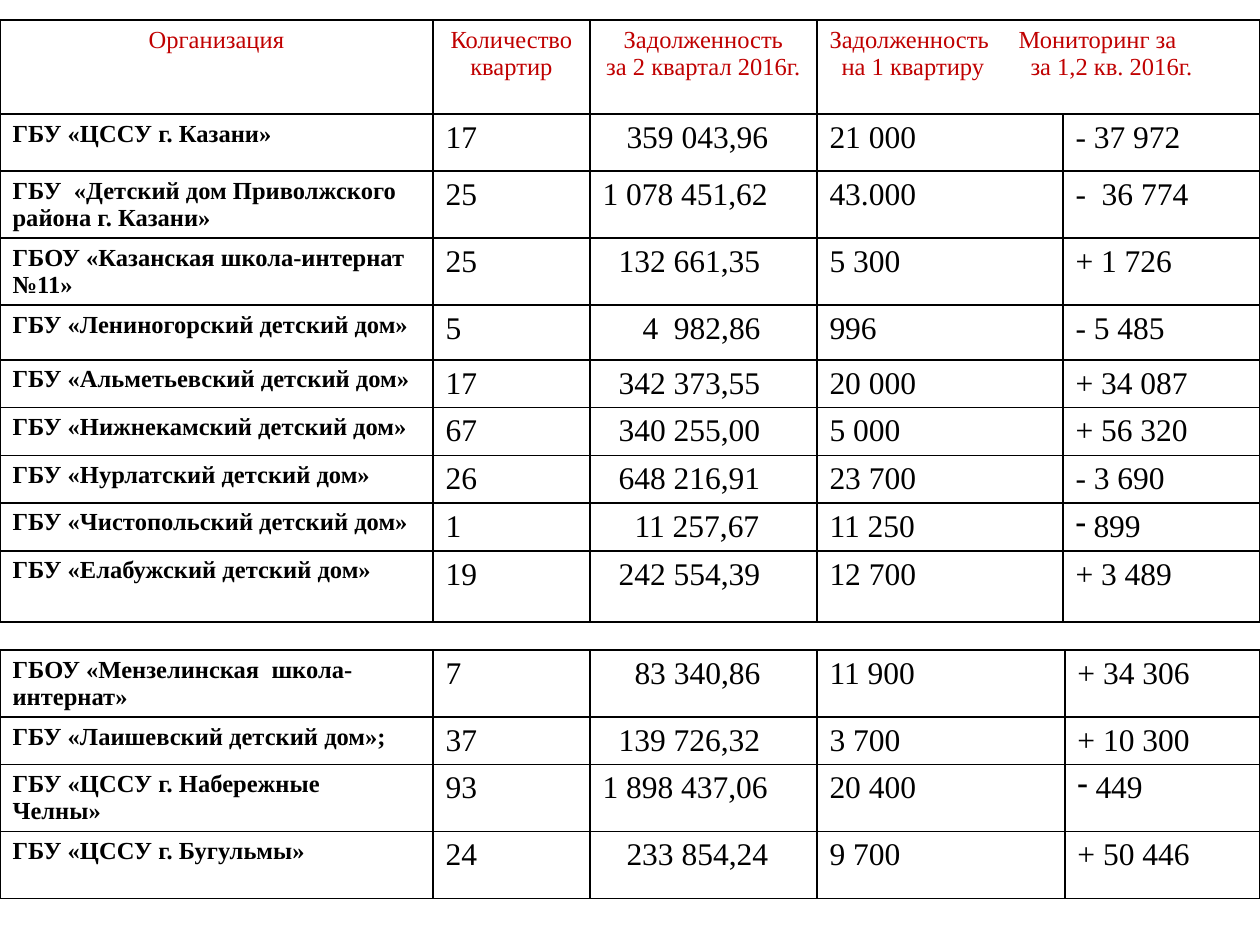
from pptx import Presentation
from pptx.dml.color import RGBColor as RGB
from pptx.enum.text import PP_ALIGN as Align
from pptx.oxml import parse_xml
from pptx.oxml.ns import nsdecls
from pptx.util import Pt

SCALE = 914400 / 126
FACE = "Times New Roman"
RED, BLACK, WHITE = "C00000", "000000", "FFFFFF"
HEAD = {"size": Pt(14), "bold": False}
NAME = {"size": Pt(14), "bold": True}
BODY = {"size": Pt(18), "bold": False}
STEP = 8    # indent unit for sums
DASH = 18   # hanging indent of a dash bullet

# Name, flats, indent steps of the debt, debt, debt per flat, change
TOP = [
    ("ГБУ «ЦССУ г. Казани»", "17", 3, "359 043,96", "21 000", "- 37 972"),
    ("ГБУ  «Детский дом Приволжского района г. Казани»", "25", 0,
     "1 078 451,62", "43.000", "-  36 774"),
    ("ГБОУ «Казанская школа-интернат №11»", "25", 2,
     "132 661,35", "5 300", "+ 1 726"),
    ("ГБУ «Лениногорский детский дом»", "5", 5, "4  982,86", "996", "- 5 485"),
    ("ГБУ «Альметьевский детский дом»", "17", 2,
     "342 373,55", "20 000", "+ 34 087"),
    ("ГБУ «Нижнекамский детский дом»", "67", 2,
     "340 255,00", "5 000", "+ 56 320"),
    ("ГБУ «Нурлатский детский дом»", "26", 2,
     "648 216,91", "23 700", "- 3 690"),
    ("ГБУ «Чистопольский детский дом»", "1", 4, "11 257,67", "11 250", "•899"),
    ("ГБУ «Елабужский детский дом»", "19", 2,
     "242 554,39", "12 700", "+ 3 489"),
]
LOW = [
    ("ГБОУ «Мензелинская  школа-интернат»", "7", 4,
     "83 340,86", "11 900", "+ 34 306"),
    ("ГБУ «Лаишевский детский дом»;", "37", 2,
     "139 726,32", "3 700", "+ 10 300"),
    ("ГБУ «ЦССУ г. Набережные  Челны»", "93", 0,
     "1 898 437,06", "20 400", "•449"),
    ("ГБУ «ЦССУ г. Бугульмы»", "24", 3, "233 854,24", "9 700", "+ 50 446"),
]


def px(n):
    return round(n * SCALE)


def color(code):
    return RGB.from_string(code)


def style(cell):
    """White fill and a thin black line on every side."""
    props = cell._tc.get_or_add_tcPr()
    for side in ("lnL", "lnR", "lnT", "lnB"):
        props.append(parse_xml(
            f'<a:{side} {nsdecls("a")} w="12700"><a:solidFill>'
            f'<a:srgbClr val="{BLACK}"/></a:solidFill></a:{side}>'))
    cell.fill.solid()
    cell.fill.fore_color.rgb = color(WHITE)


def write(para, text, form, code=BLACK, left=0, hang=0, align=None):
    run = para.add_run()
    run.text = text
    for key, val in {"name": FACE, **form}.items():
        setattr(run.font, key, val)
    run.font.color.rgb = color(code)
    para.alignment = align
    props = para._p.get_or_add_pPr()
    props.set("marL", str(px(left)))
    props.set("indent", str(-px(hang)))
    return props


def fill_row(table, row, data):
    name, flats, steps, debt, share, change = data
    for col, text in enumerate((name, flats, debt, share, change)):
        para = table.cell(row, col).text_frame.paragraphs[0]
        form = BODY if col else NAME
        if text.startswith("•"):
            props = write(para, text[1:], form, left=DASH, hang=DASH)
            props.append(parse_xml(f'<a:buChar {nsdecls("a")} char="-"/>'))
        else:
            write(para, text, form, left=steps * STEP if col == 2 else 0)


def fill_head(table):
    heads = ["Организация"], ["Количество квартир"], [
        "Задолженность", "за 2 квартал 2016г."]
    for col, lines in enumerate(heads):
        frame = table.cell(0, col).text_frame
        for i, text in enumerate(lines):
            para = frame.add_paragraph() if i else frame.paragraphs[0]
            write(para, text, HEAD, RED, align=Align.CENTER)
    # The last two columns share one heading, split by a tab stop
    cell = table.cell(0, 3)
    cell.merge(table.cell(0, 4))
    frame = cell.text_frame
    pairs = (("Задолженность\tМониторинг за", 0, 252),
             ("на 1 квартиру\tза 1,2 кв. 2016г.", 12, 241))
    for i, (text, left, stop) in enumerate(pairs):
        para = frame.add_paragraph() if i else frame.paragraphs[0]
        props = write(para, text, HEAD, RED, left)
        props.append(parse_xml(
            f'<a:tabLst {nsdecls("a")}><a:tab pos="{px(stop)}" algn="l"/>'
            '</a:tabLst>'))


def add_grid(slide, top, cols, rows):
    table = slide.shapes.add_table(
        len(rows), len(cols), 0, px(top), px(sum(cols)), px(sum(rows))).table
    table.first_row = table.horz_banding = False
    for col, wide in zip(table.columns, cols):
        col.width = px(wide)
    for row, high in zip(table.rows, rows):
        row.height = px(high)
        for cell in row.cells:
            style(cell)
    return table


def main():
    deck = Presentation()
    deck.slide_width, deck.slide_height = px(1260), px(945)
    slide = deck.slides.add_slide(deck.slide_layouts[6])

    # Upper table with headings
    upper = add_grid(slide, 20, (433, 157, 227, 246, 197),
                     (94, 57, 67, 67, 55, 47, 48, 47, 48, 71))
    fill_head(upper)
    for row, data in enumerate(TOP, 1):
        fill_row(upper, row, data)

    # Lower table
    lower = add_grid(slide, 650, (433, 157, 227, 248, 195), (67, 47, 67, 67))
    for row, data in enumerate(LOW):
        fill_row(lower, row, data)

    deck.save("out.pptx")


if __name__ == "__main__":
    main()
